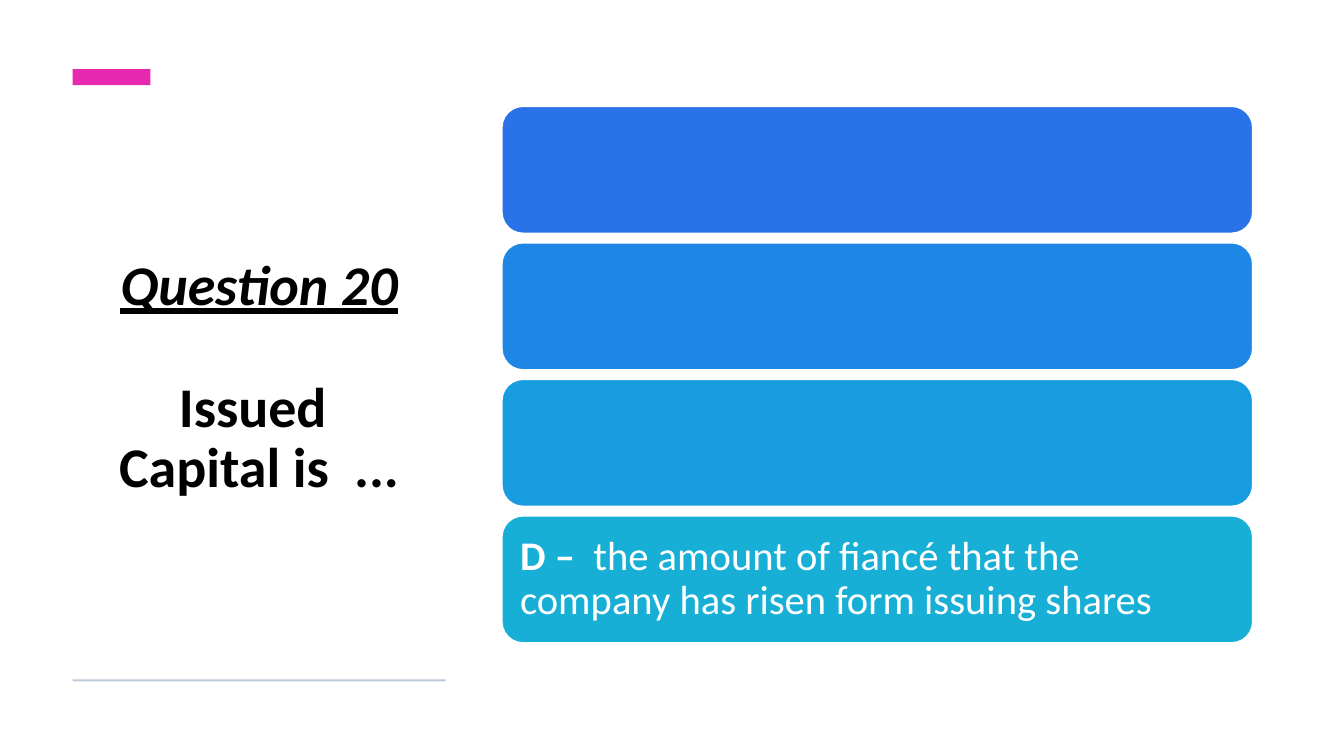
"""Build the quiz slide on issued capital."""
import dataclasses

import pptx
import pptx.dml.color
import pptx.enum.shapes
import pptx.enum.text
import pptx.util

Cm = pptx.util.Cm
Pt = pptx.util.Pt
Preset = pptx.enum.shapes.MSO_SHAPE
Align = pptx.enum.text.PP_ALIGN


@dataclasses.dataclass(frozen=True)
class Theme:
    font: str = "Calibri"
    question_size: int = 40
    answer_size: int = 29
    ink: str = "000000"
    paper: str = "FFFFFF"
    accent: str = "E729B1"
    rule: str = "BDC8DB"
    answers: tuple = ("2972E7", "1E87E6", "189CE0", "17AFD5")


def rgb(value):
    return pptx.dml.color.RGBColor.from_string(value)


def write(paragraph, text, *, font, size, color, bold=False, italic=False, underline=False):
    run = paragraph.add_run()
    run.text = text
    run.font.name = font
    run.font.size = Pt(size)
    run.font.color.rgb = rgb(color)
    run.font.bold = bold
    run.font.italic = italic
    run.font.underline = underline


class QuizSlide:
    def __init__(self, slide, theme):
        self.shapes = slide.shapes
        self.theme = theme

    def block(self, left, top, width, height, fill, preset=Preset.RECTANGLE, outline=None):
        block = self.shapes.add_shape(preset, Cm(left), Cm(top), Cm(width), Cm(height))
        block.shadow.inherit = False
        block.fill.solid()
        block.fill.fore_color.rgb = rgb(fill)
        if outline:
            block.line.color.rgb = rgb(outline)
            block.line.width = Pt(1)
        else:
            block.line.fill.background()
        return block

    def frame(self, shape, inset_x, inset_y):
        frame = shape.text_frame
        frame.word_wrap = True
        frame.vertical_anchor = pptx.enum.text.MSO_ANCHOR.MIDDLE
        frame.margin_left = frame.margin_right = Cm(inset_x)
        frame.margin_top = frame.margin_bottom = Cm(inset_y)
        return frame

    def question(self, left, top, width, height, heading, lines):
        box = self.shapes.add_textbox(Cm(left), Cm(top), Cm(width), Cm(height))
        frame = self.frame(box, 0.25, 0.13)
        style = dict(font=self.theme.font, size=self.theme.question_size,
                     color=self.theme.ink, bold=True)
        title = frame.paragraphs[0]
        write(title, heading, italic=True, underline=True, **style)
        prompt = frame.add_paragraph()
        prompt.space_before = Pt(44)
        for index, line in enumerate(lines):
            if index:
                prompt.add_line_break()
            write(prompt, line, **style)
        for paragraph in frame.paragraphs:
            paragraph.alignment = Align.CENTER
            paragraph.line_spacing = 0.9

    def answer(self, left, top, width, height, fill, label, text):
        card = self.block(left, top, width, height, fill,
                          Preset.ROUNDED_RECTANGLE, self.theme.paper)
        if not text:
            return
        paragraph = self.frame(card, 0.3, 0.3).paragraphs[0]
        paragraph.alignment = Align.LEFT
        paragraph.line_spacing = 0.9
        style = dict(font=self.theme.font, size=self.theme.answer_size, color=self.theme.paper)
        write(paragraph, label, bold=True, **style)
        write(paragraph, text, **style)


def main():
    deck = pptx.Presentation()
    deck.slide_width, deck.slide_height = Cm(33.87), Cm(19.05)
    theme = Theme()
    quiz = QuizSlide(deck.slides.add_slide(deck.slide_layouts[6]), theme)

    margin, column = 1.83, 9.4
    quiz.question(margin, 2.67, column, 13.74, "Question 20", ["Issued ", "Capital is  ..."])
    quiz.block(margin, 1.74, 1.96, 0.41, theme.accent)
    quiz.block(margin, 17.12, column, 0.05, theme.rule)

    answers = [("", "")] * 3 + [
        ("D –  ", "the amount of fiancé that the company has risen form issuing shares")]
    for row, (fill, (label, text)) in enumerate(zip(theme.answers, answers)):
        quiz.answer(12.65, 2.68 + row * 3.44, 18.92, 3.2, fill, label, text)

    deck.save("out.pptx")


if __name__ == "__main__":
    main()
